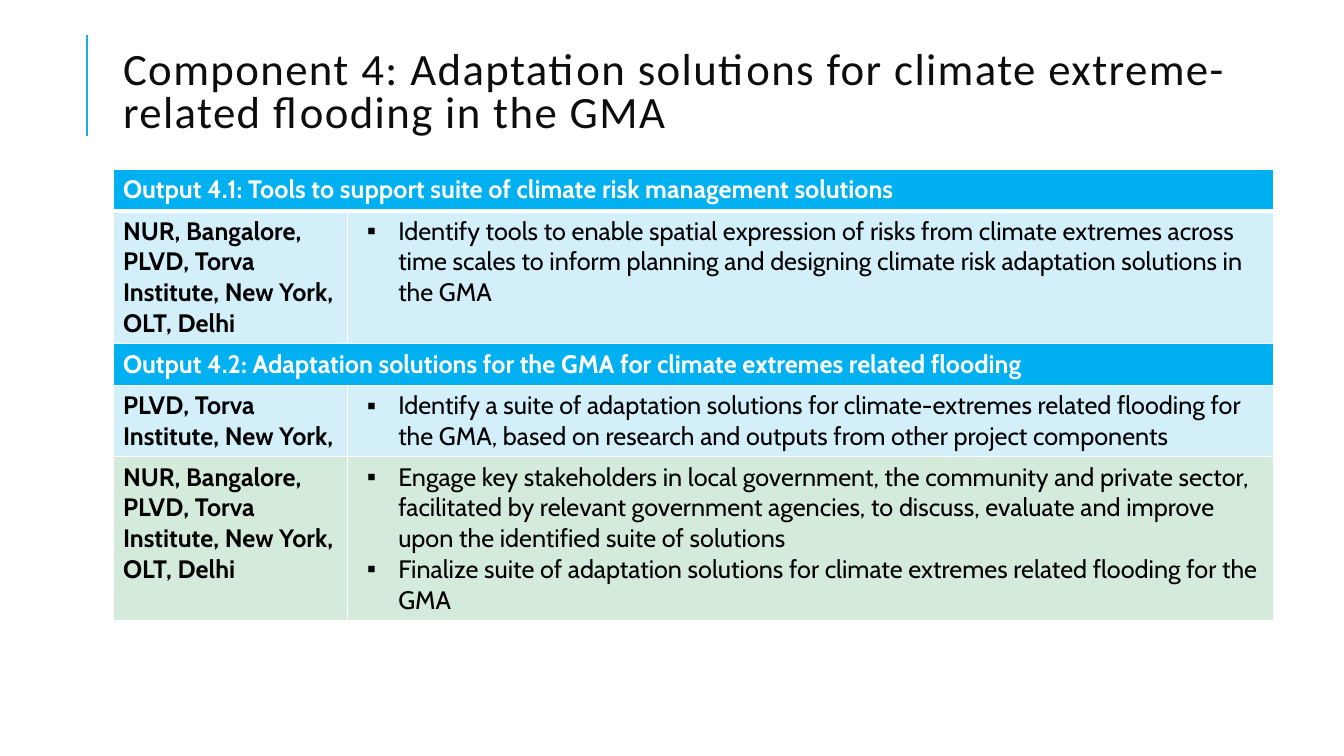
import dataclasses

import pptx
import pptx.dml.color
import pptx.enum.shapes
import pptx.enum.text
import pptx.oxml
import pptx.oxml.ns
import pptx.util

Inches = pptx.util.Inches
Pt = pptx.util.Pt


@dataclasses.dataclass(frozen=True)
class Theme:
    title_font: str = "Calibri"
    body_font: str = "Cabin"
    title_size: int = 32
    body_size: int = 18
    title_color: str = "0D0D0D"
    text_color: str = "000000"
    white: str = "FFFFFF"
    accent: str = "1CADE4"
    header_fill: str = "00B0F0"
    blue_fill: str = "D2EFFA"
    green_fill: str = "D4EBDB"


THEME = Theme()
TITLE = "Component 4: Adaptation solutions for climate extreme-related flooding in the GMA"
NEW_YORK_PARTNER = "PLVD, Torva Institute, New York,"
ALL_PARTNERS = ["NUR, Bangalore,", NEW_YORK_PARTNER, "OLT, Delhi"]
# Each row: fill, partners or output heading, activities (none for a heading)
ROWS = [
    (THEME.header_fill,
     ["Output 4.1: Tools to support suite of climate risk management solutions"], []),
    (THEME.blue_fill, ALL_PARTNERS,
     ["Identify tools to enable spatial expression of risks from climate extremes across time "
      "scales to inform planning and designing climate risk adaptation solutions in the GMA"]),
    (THEME.header_fill,
     ["Output 4.2: Adaptation solutions for the GMA for climate extremes related flooding"], []),
    (THEME.blue_fill, [NEW_YORK_PARTNER],
     ["Identify a suite of adaptation solutions for climate-extremes related flooding for the "
      "GMA, based on research and outputs from other project components"]),
    (THEME.green_fill, ALL_PARTNERS,
     ["Engage key stakeholders in local government, the community and private sector, "
      "facilitated by relevant government agencies, to discuss, evaluate and improve upon "
      "the identified suite of solutions",
      "Finalize suite of adaptation solutions for climate extremes related flooding for the GMA"]),
]
COLUMN_WIDTHS = [2.33, 9.18]
ROW_HEIGHT = 0.41


def rgb(color):
    return pptx.dml.color.RGBColor.from_string(color)


def xml(markup):
    """Parse one DrawingML element whose tag starts with a:."""
    tag_end = min(markup.find(mark) for mark in " />" if mark in markup)
    return pptx.oxml.parse_xml(
        f"{markup[:tag_end]} {pptx.oxml.ns.nsdecls('a')}{markup[tag_end:]}")


def write_text(frame, lines, *, font=THEME.body_font, size=THEME.body_size,
               color=THEME.text_color, bold=False, bullet=None, line_spacing=None,
               letter_spacing=None):
    for index, line in enumerate(lines):
        paragraph = frame.paragraphs[0] if index == 0 else frame.add_paragraph()
        paragraph.alignment = pptx.enum.text.PP_ALIGN.LEFT
        if line_spacing:
            paragraph.line_spacing = line_spacing
        if bullet:
            add_bullet(paragraph, bullet)
        run = paragraph.add_run()
        run.text = line
        run.font.name = font
        run.font.size = Pt(size)
        run.font.bold = bold
        run.font.color.rgb = rgb(color)
        if letter_spacing:
            run.font._element.set("spc", str(letter_spacing * 100))


def add_bullet(paragraph, character):
    properties = paragraph._p.get_or_add_pPr()
    properties.set("marL", str(Inches(0.4)))
    properties.set("indent", str(Inches(-0.31)))
    properties.append(xml(f'<a:buFont typeface="{THEME.title_font}"/>'))
    properties.append(xml(f'<a:buChar char="{character}"/>'))


def set_borders(cell, top, bottom):
    """Draw white borders; top and bottom are widths in points."""
    properties = cell._tc.get_or_add_tcPr()
    sides = {"lnL": 1, "lnR": 1, "lnT": top, "lnB": bottom}
    for position, (side, width) in enumerate(sides.items()):
        properties.insert(position, xml(
            f'<a:{side} w="{Pt(width)}"><a:solidFill><a:srgbClr val="{THEME.white}"/>'
            f'</a:solidFill></a:{side}>'))


def add_title(slide):
    title = slide.shapes.title
    title.left, title.top = Inches(1.12), Inches(0.22)
    title.width, title.height = Inches(11.8), Inches(1.43)
    frame = title.text_frame
    frame.word_wrap = True
    frame.auto_size = pptx.enum.text.MSO_AUTO_SIZE.NONE
    frame.vertical_anchor = pptx.enum.text.MSO_ANCHOR.MIDDLE
    write_text(frame, [TITLE], font=THEME.title_font, size=THEME.title_size,
               color=THEME.title_color, line_spacing=0.8, letter_spacing=1)


def add_accent_line(slide):
    line = slide.shapes.add_connector(
        pptx.enum.shapes.MSO_CONNECTOR.STRAIGHT,
        Inches(0.86), Inches(1.35), Inches(0.86), Inches(0.35))
    line.line.color.rgb = rgb(THEME.accent)
    line.line.width = Pt(1.5)
    line._element.spPr.append(xml("<a:effectLst/>"))


def add_outputs_table(slide):
    table = slide.shapes.add_table(
        len(ROWS), len(COLUMN_WIDTHS), Inches(1.12), Inches(1.68),
        Inches(sum(COLUMN_WIDTHS)), Inches(ROW_HEIGHT * len(ROWS))).table
    table.horz_banding = False
    for column, width in zip(table.columns, COLUMN_WIDTHS):
        column.width = Inches(width)
    for index, (fill, partners, activities) in enumerate(ROWS):
        table.rows[index].height = Inches(ROW_HEIGHT)
        first, second = table.cell(index, 0), table.cell(index, 1)
        for cell in (first, second):
            cell.fill.solid()
            cell.fill.fore_color.rgb = rgb(fill)
            set_borders(cell, top=3 if index == 1 else 1, bottom=3 if index == 0 else 1)
        if activities:
            write_text(second.text_frame, activities, bullet="▪")
        else:
            first.merge(second)
        write_text(first.text_frame, partners, bold=True,
                   color=THEME.text_color if activities else THEME.white)


def main():
    presentation = pptx.Presentation()
    presentation.slide_width = Inches(13.33)
    presentation.slide_height = Inches(7.5)
    slide = presentation.slides.add_slide(presentation.slide_layouts.get_by_name("Title Only"))
    add_accent_line(slide)
    add_title(slide)
    add_outputs_table(slide)
    presentation.save("out.pptx")


if __name__ == "__main__":
    main()
